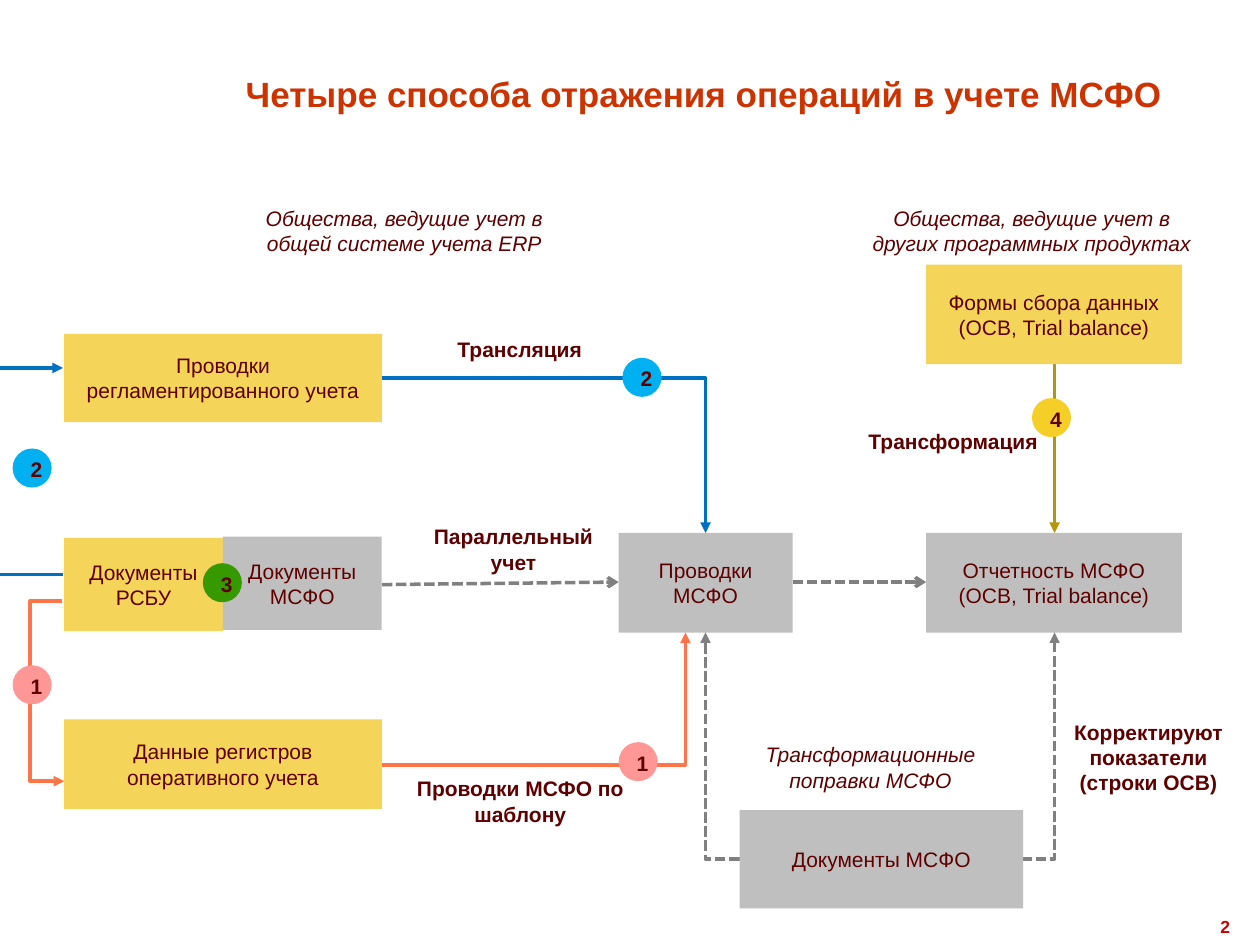
from lxml.etree import SubElement
from pptx import Presentation
from pptx.dml.color import RGBColor
from pptx.enum.dml import MSO_LINE
from pptx.enum.shapes import MSO_CONNECTOR as LINK, MSO_SHAPE as SHAPE
from pptx.enum.text import MSO_ANCHOR as ANCHOR, PP_ALIGN as ALIGN
from pptx.oxml.ns import qn
from pptx.util import Pt

PX = 9144  # 100 px to the inch
INK, TITLE_RED, NUMBER_RED = "5F0000", "CC3300", "D20000"
YELLOW, GREY, DASH_GREY = "F4D459", "BFBFBF", "808080"
BLUE, ORANGE, OLIVE = "0070C0", "FF7547", "B59509"
PINK, SKY, GREEN, GOLD = "FF9797", "00B0F0", "369900", "F5CF28"
BADGE = 31


def px(*values):
    return [int(value * PX) for value in values]


def color(hex_code):
    return RGBColor.from_string(hex_code)


def write(frame, lines, align=ALIGN.CENTER, size=12, ink=INK, bold=False,
          italic=False, spacing=None):
    frame.word_wrap = True
    for index, line in enumerate(lines):
        para = frame.add_paragraph() if index else frame.paragraphs[0]
        para.alignment = align
        if spacing:
            para.line_spacing = spacing
        span = para.add_run()
        span.text = line
        font = span.font
        font.name, font.size = "Arial", Pt(size)
        font.bold, font.italic = bold, italic
        font.color.rgb = color(ink)


def add_filled(page, kind, box, fill):
    shape = page.shapes.add_shape(kind, *px(*box))
    shape.shadow.inherit = False
    shape.fill.solid()
    shape.fill.fore_color.rgb = color(fill)
    shape.line.fill.background()
    shape.text_frame.vertical_anchor = ANCHOR.MIDDLE
    return shape


def add_block(page, box, fill, *lines):
    block = add_filled(page, SHAPE.SNIP_2_DIAG_RECTANGLE, box, fill)
    for index in range(2):
        block.adjustments[index] = 0
    write(block.text_frame, lines)


def add_badge(page, x, y, fill, number):
    badge = add_filled(page, SHAPE.OVAL, (x, y, BADGE, BADGE), fill)
    write(badge.text_frame, [number], ALIGN.LEFT, bold=True, spacing=1.1)


def add_label(page, box, *lines, **style):
    label = page.shapes.add_textbox(*px(*box))
    write(label.text_frame, lines, **style)


def add_link(page, start, end, hex_code, head="triangle", dashed=False,
             preset="line", bend=None):
    """Draw a line from start to end; an elbow leaves start horizontally."""
    kind = LINK.STRAIGHT if preset == "line" else LINK.ELBOW
    link = page.shapes.add_connector(kind, *px(*start, *end))
    link.line.color.rgb = color(hex_code)
    link.line.width = Pt(2)
    if dashed:
        link.line.dash_style = MSO_LINE.SQUARE_DOT
    properties = link._element.spPr
    geometry = properties.find(qn("a:prstGeom"))
    geometry.set("prst", preset)
    if bend is not None:
        guides = geometry.get_or_add_avLst()
        SubElement(guides, qn("a:gd"), name="adj1", fmla=f"val {bend}")
    if head:
        SubElement(properties.find(qn("a:ln")), qn("a:tailEnd"), type=head)
    SubElement(properties, qn("a:effectLst"))


def add_heading(page, box):
    title = page.shapes.title
    title.left, title.top, title.width, title.height = px(*box)
    title.text_frame.vertical_anchor = ANCHOR.MIDDLE
    write(title.text_frame, ["Четыре способа отражения операций в учете МСФО"],
          ALIGN.LEFT, 20, TITLE_RED, bold=True, spacing=0.9)


def add_own_accounting(page, x, y):
    """Companies in the shared system: methods 1, 2 and 3."""
    def at(left, top, *size):
        return (x + left, y + top, *size)

    add_label(page, at(173, 0, 296, 50), "Общества, ведущие учет в",
              "общей системе учета ERP", italic=True)

    # Links
    add_link(page, at(303, 142), at(560, 265), BLUE, preset="bentConnector2")
    add_link(page, at(303, 449), at(544, 344), ORANGE, preset="bentConnector2")
    add_link(page, at(303, 306), at(491, 304), DASH_GREY, "arrow", dashed=True)
    add_link(page, at(0, 134), at(50, 134), BLUE)
    add_link(page, at(0, 298), at(50, 298), BLUE, head=None)
    add_link(page, at(49, 319), at(51, 462), ORANGE,
             preset="bentConnector3", bend=-1250000)

    # Records and documents
    add_block(page, at(51, 107, 252, 70), YELLOW,
              "Проводки регламентированного учета")
    add_block(page, at(51, 269, 126, 74), YELLOW, "Документы РСБУ")
    add_block(page, at(177, 268, 126, 74), GREY, "Документы МСФО")
    add_block(page, at(51, 413, 252, 71), YELLOW,
              "Данные регистров оперативного учета")
    add_block(page, at(491, 265, 138, 79), GREY, "Проводки МСФО")

    # Method names
    for box, name in [((332, 104, 161, 30), "Трансляция"),
                      ((327, 253, 161, 50), "Параллельный учет"),
                      ((311, 453, 204, 50), "Проводки МСФО по шаблону")]:
        add_label(page, at(*box), name, bold=True)

    # Method numbers
    for left, top, fill, number in [
            (10, 370, PINK, "1"), (491, 431, PINK, "1"),
            (494, 126, SKY, "2"), (10, 198, SKY, "2"), (161, 289, GREEN, "3")]:
        add_badge(page, *at(left, top), fill, number)


def add_other_accounting(page, x, y):
    """Companies in other systems: method 4, down to the reports."""
    def at(left, top, *size):
        return (x + left, y + top, *size)

    add_label(page, at(5, 0, 276, 50),
              "Общества, ведущие учет в других программных продуктах",
              italic=True)
    add_link(page, at(161, 131), at(161, 265), OLIVE)
    add_link(page, at(-47, 304), at(59, 304), DASH_GREY, "arrow", dashed=True)
    for top, name in [(52, "Формы сбора данных"), (265, "Отчетность МСФО")]:
        add_block(page, at(59, top, 203, 79), YELLOW if top == 52 else GREY,
                  name, "(ОСВ, Trial balance)")
    add_label(page, at(0, 177, 161, 30), "Трансформация", bold=True)
    add_badge(page, *at(143, 158), GOLD, "4")


def add_adjustments(page, x, y):
    """Adjusting documents that feed the postings and the reports."""
    def at(left, top, *size):
        return (x + left, y + top, *size)

    for start, end in [(27, 0), (251, 277)]:
        add_link(page, at(start, 180), at(end, 0), DASH_GREY, dashed=True,
                 preset="bentConnector2")
    add_block(page, at(27, 141, 225, 78), GREY, "Документы МСФО")
    add_label(page, at(33, 82, 196, 50), "Трансформационные поправки МСФО",
              italic=True)
    add_label(page, at(271, 64, 161, 71),
              "Корректируют показатели (строки ОСВ)", bold=True)


def main():
    deck = Presentation()
    deck.slide_width, deck.slide_height = px(1000, 750)
    page = deck.slides.add_slide(deck.slide_layouts[5])
    add_heading(page, (185, 17, 753, 118))
    add_own_accounting(page, 0, 158)
    add_other_accounting(page, 676, 158)
    add_adjustments(page, 560, 502)
    add_label(page, (902, 722, 84, 28), "2", align=ALIGN.RIGHT, size=10,
              ink=NUMBER_RED, bold=True)
    deck.save("out.pptx")


if __name__ == "__main__":
    main()
